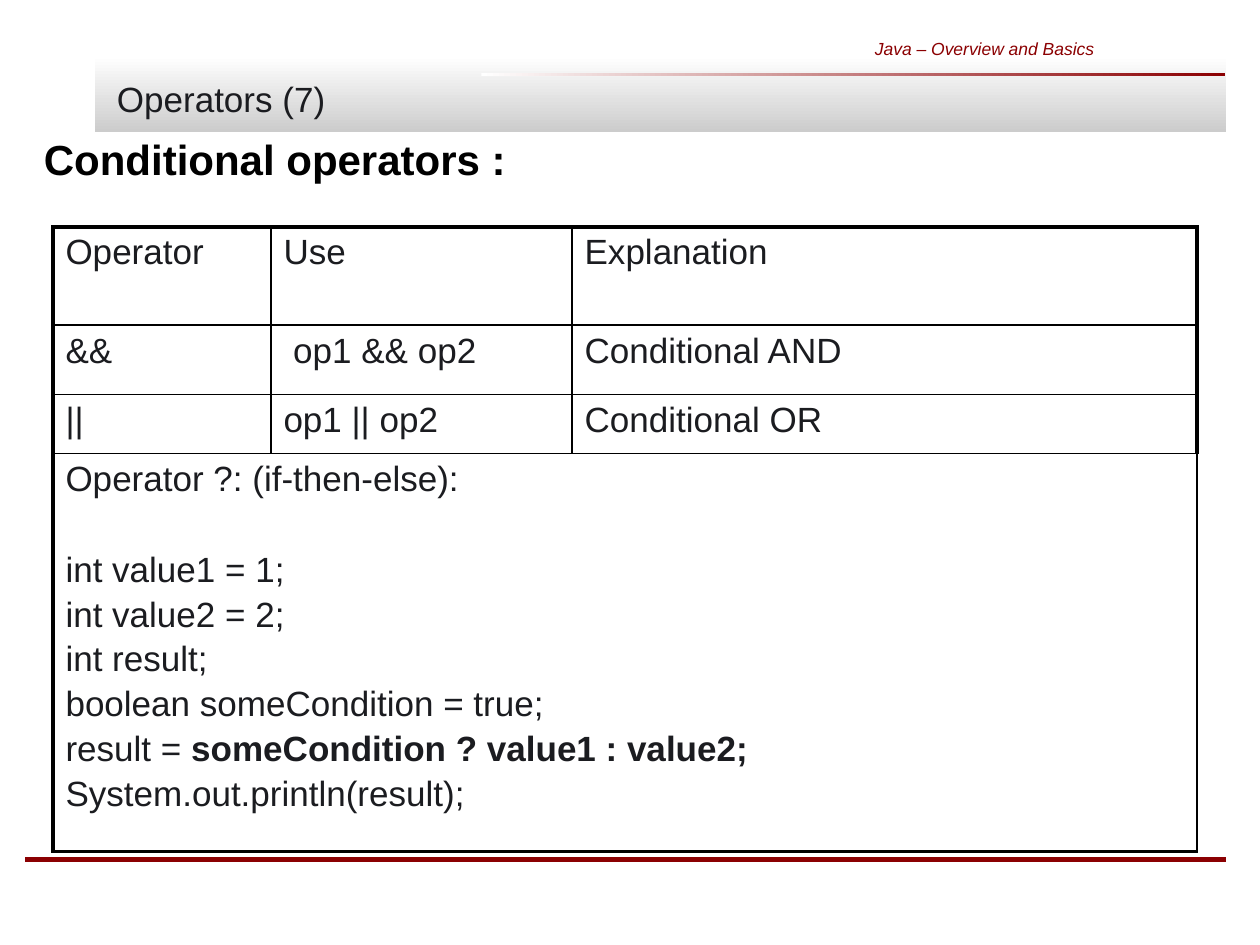
from dataclasses import dataclass

import pptx
import pptx.dml.color
import pptx.enum.shapes
import pptx.enum.text
import pptx.oxml.ns
import pptx.util
from lxml import etree

Inches = pptx.util.Inches
Pt = pptx.util.Pt
qn = pptx.oxml.ns.qn
ANCHOR = pptx.enum.text.MSO_ANCHOR
ALIGN = pptx.enum.text.PP_ALIGN

RED, INK, BLACK = "8B0002", "1B1C20", "000000"
THICK, THIN = 2.25, 1
GAP, BREAK = 3.3, 29.6


@dataclass
class Band:
    left: float
    top: float
    width: float
    height: float
    end: str
    angle: int


@dataclass
class Label:
    left: float
    top: float
    width: float
    height: float
    text: str
    size: float
    tint: str
    bold: bool = False
    slant: bool = False
    glow: bool = False
    anchor: ANCHOR = ANCHOR.TOP
    align: ALIGN = ALIGN.LEFT


@dataclass
class Line:
    text: str
    strong: str = ""
    before: float = GAP


BANDS = [
    Band(0.75, 0.44, 8.98, 0.61, "CCCCCC", 270),
    Band(3.82, 0.58, 5.9, 0.02, RED, 0),
]
LABELS = [
    Label(5.87, 0.19, 2.91, 0.39, "Java – Overview and Basics", 10, RED,
          slant=True, anchor=ANCHOR.MIDDLE, align=ALIGN.RIGHT),
    Label(0.83, 0.17, 9.17, 0.83, "Operators (7)", 20, INK,
          glow=True, anchor=ANCHOR.BOTTOM),
    Label(0.25, 1.01, 9.75, 1.58, "Conditional operators :", 24, BLACK, bold=True),
]
COLS = [1.73, 2.39, 4.96]
ROWS = [0.78, 0.55, 0.47, 3.16]
GRID = [
    ["Operator", "Use", "Explanation"],
    ["&&", " op1 && op2", "Conditional AND"],
    ["||", "op1 || op2", "Conditional OR"],
]
CODE = [
    Line("Operator ?: (if-then-else):", before=0),
    Line("int value1 = 1;", before=BREAK),
    Line("int value2 = 2;"),
    Line("int result;"),
    Line("boolean someCondition = true;"),
    Line("result = ", "someCondition ? value1 : value2;"),
    Line("System.out.println(result);"),
]


def color(code: str) -> pptx.dml.color.RGBColor:
    return pptx.dml.color.RGBColor.from_string(code)


def add_run(para, text: str, size: float, tint: str, bold=False, slant=False):
    run = para.add_run()
    run.text = text
    run.font.size = Pt(size)
    run.font.name = "Arial"
    run.font.bold = bold
    run.font.italic = slant
    run.font.color.rgb = color(tint)
    return run


def add_glow(run) -> None:
    props = run.font._element
    effect = etree.Element(qn("a:effectLst"))
    shade = etree.SubElement(effect, qn("a:outerShdw"), dist="38100", dir="2700000")
    etree.SubElement(shade, qn("a:srgbClr"), val="FFFFFF")
    props.find(qn("a:solidFill")).addnext(effect)


def add_band(slide, band: Band) -> None:
    shape = slide.shapes.add_shape(
        pptx.enum.shapes.MSO_SHAPE.RECTANGLE,
        Inches(band.left), Inches(band.top), Inches(band.width), Inches(band.height))
    shape.shadow.inherit = False
    shape.line.fill.background()
    shape.fill.gradient()
    shape.fill.gradient_angle = band.angle
    for stop, tint in zip(shape.fill.gradient_stops, ("FFFFFF", band.end)):
        stop.color.rgb = color(tint)


def add_rule(slide, left: float, right: float, top: float) -> None:
    rule = slide.shapes.add_connector(
        pptx.enum.shapes.MSO_CONNECTOR.STRAIGHT,
        Inches(left), Inches(top), Inches(right), Inches(top))
    rule.line.color.rgb = color(RED)
    rule.line.width = Pt(3)
    etree.SubElement(rule._element.spPr, qn("a:effectLst"))


def add_label(slide, label: Label) -> None:
    box = slide.shapes.add_textbox(
        Inches(label.left), Inches(label.top), Inches(label.width), Inches(label.height))
    frame = box.text_frame
    frame.word_wrap = True
    frame.vertical_anchor = label.anchor
    para = frame.paragraphs[0]
    para.alignment = label.align
    run = add_run(para, label.text, label.size, label.tint, label.bold, label.slant)
    if label.glow:
        add_glow(run)


def fill_cell(cell, lines: list[Line]) -> None:
    frame = cell.text_frame
    for num, line in enumerate(lines):
        para = frame.add_paragraph() if num else frame.paragraphs[0]
        para.space_before = Pt(line.before)
        add_run(para, line.text, 20, INK)
        if line.strong:
            add_run(para, line.strong, 20, INK, bold=True)


def add_edges(cell, row: int, col: int) -> None:
    outer = {"L": col == 0, "R": col == len(COLS) - 1,
             "T": row == 0, "B": row == len(ROWS) - 1}
    props = cell._tc.get_or_add_tcPr()
    for side, edge in outer.items():
        width = Pt(THICK if edge else THIN)
        line = etree.SubElement(props, qn(f"a:ln{side}"), w=str(width))
        fill = etree.SubElement(line, qn("a:solidFill"))
        etree.SubElement(fill, qn("a:srgbClr"), val=BLACK)
    cell.fill.background()


def add_grid(slide) -> None:
    table = slide.shapes.add_table(
        len(ROWS), len(COLS), Inches(0.42), Inches(1.8),
        Inches(sum(COLS)), Inches(sum(ROWS))).table
    table.first_row = False
    table.horz_banding = False
    for col, width in zip(table.columns, COLS):
        col.width = Inches(width)
    for row, height in zip(table.rows, ROWS):
        row.height = Inches(height)
    for row in range(len(ROWS)):
        for col in range(len(COLS)):
            add_edges(table.cell(row, col), row, col)
    for row, texts in enumerate(GRID):
        for col, text in enumerate(texts):
            fill_cell(table.cell(row, col), [Line(text, before=0)])
    last = len(ROWS) - 1
    table.cell(last, 0).merge(table.cell(last, len(COLS) - 1))
    fill_cell(table.cell(last, 0), CODE)


def main() -> None:
    deck = pptx.Presentation()
    deck.slide_width = Inches(10)
    deck.slide_height = Inches(7.5)
    slide = deck.slides.add_slide(deck.slide_layouts[6])
    first, second = BANDS
    add_band(slide, first)
    add_rule(slide, 0.2, 9.73, 6.82)
    add_band(slide, second)
    for label in LABELS:
        add_label(slide, label)
    add_grid(slide)
    deck.save("out.pptx")


if __name__ == "__main__":
    main()
